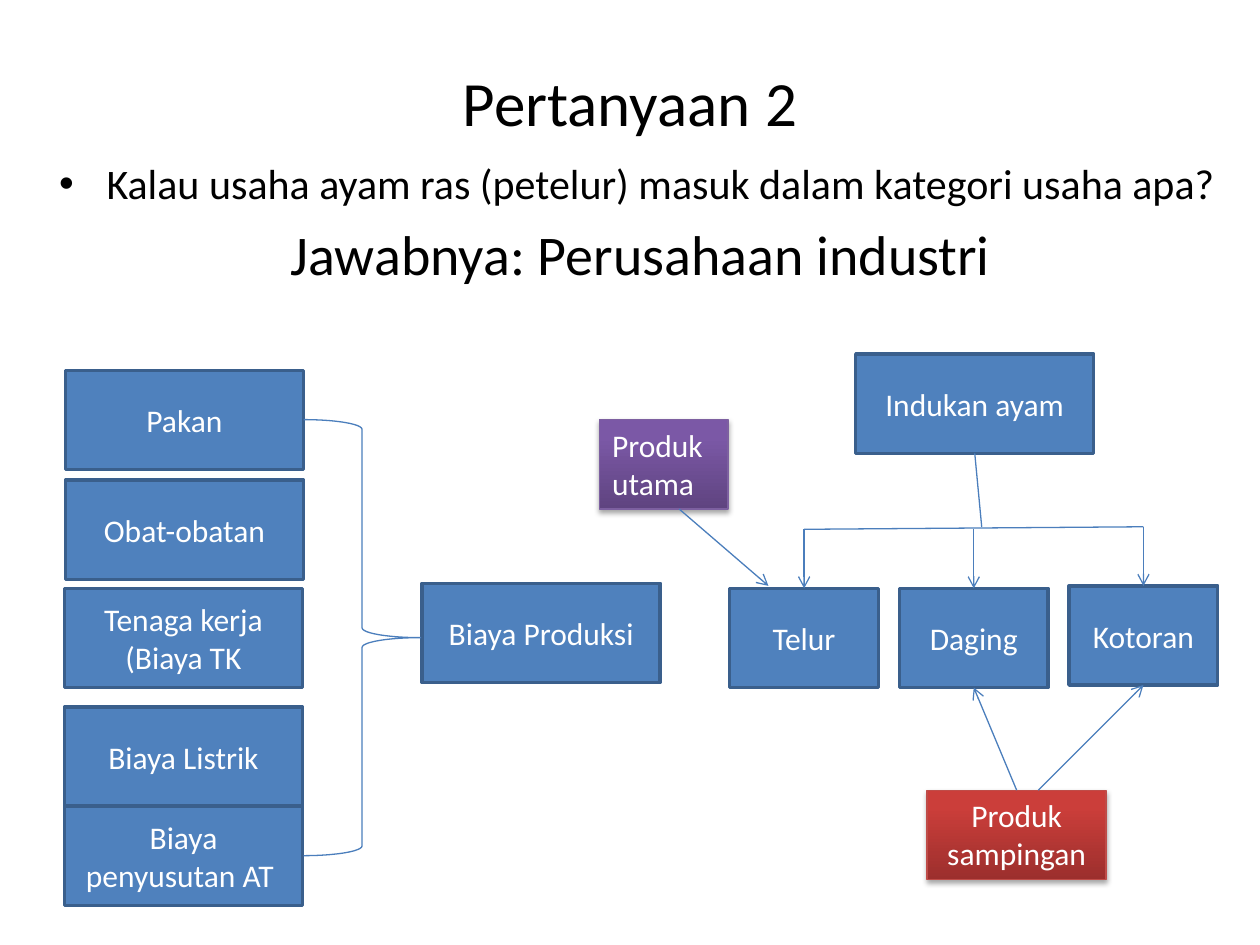
from dataclasses import dataclass
from typing import Optional

from lxml.etree import SubElement
from pptx import Presentation
from pptx.dml.color import RGBColor
from pptx.enum.shapes import MSO_CONNECTOR, MSO_SHAPE
from pptx.enum.text import MSO_ANCHOR, MSO_AUTO_SIZE, PP_ALIGN
from pptx.oxml.ns import qn
from pptx.util import Cm, Pt

COLORS = {
    "text": "000000", "box_text": "FFFFFF", "shadow": "000000",
    "box": "4F81BD", "box_line": "3A5F8C", "connector": "4B7EBC",
    "main_dark": "5F4480", "main_light": "7B58A6", "main_line": "7D60A0",
    "side_dark": "9C2F2D", "side_light": "CB3E3A", "side_line": "BF4C48",
}
FONT = "Calibri"
TOP, BOTTOM = 0, 2
WIDE, NARROW = 4.8, 3.0
BOX_HEIGHT, LABEL_HEIGHT = 2.0, 1.8
BRANCH_LEFT, BRANCH_STEP = 14.71, 3.42
BAR_LEFT, BAR_RIGHT = (16.21, 10.67), (23.05, 10.62)


@dataclass
class Box:
    text: str
    left: float
    top: float
    width: float = WIDE


@dataclass
class Label:
    text: str
    left: float
    top: float
    width: float
    tone: str
    align: PP_ALIGN


@dataclass
class Link:
    start: tuple
    end: tuple
    source: Optional[str] = None
    target: Optional[str] = None
    target_side: int = TOP
    source_side: int = BOTTOM
    arrow: bool = True


BOXES = [
    Box("Indukan ayam", 17.25, 7.14),
    Box("Pakan", 1.32, 7.47),
    Box("Obat-obatan", 1.32, 9.68),
    Box("Tenaga kerja (Biaya TK", 1.3, 11.86),
    Box("Biaya Listrik", 1.3, 14.25),
    Box("Biaya penyusutan AT ", 1.3, 16.26),
    Box("Biaya Produksi", 8.51, 11.76),
] + [
    Box(product, BRANCH_LEFT + i * BRANCH_STEP, top, NARROW)
    for i, (product, top) in enumerate(
        [("Telur", 11.86), ("Daging", 11.86), ("Kotoran", 11.81)])
]
LABELS = [
    Label("Produk utama", 12.09, 8.46, 2.59, "main", PP_ALIGN.LEFT),
    Label("Produk sampingan", 18.69, 15.93, 3.61, "side", PP_ALIGN.CENTER),
]
LINKS = [
    Link(BAR_LEFT, (16.21, 11.86), target="Telur"),
    Link((19.63, 10.67), (19.63, 11.86), target="Daging"),
    Link(BAR_RIGHT, (23.05, 11.81), target="Kotoran"),
    Link(BAR_LEFT, BAR_RIGHT, arrow=False),
    Link((19.65, 9.14), (19.79, 10.62), source="Indukan ayam", arrow=False),
    Link((13.69, 10.26), (15.49, 11.81)),
    Link((20.5, 15.93), (19.63, 13.86), source="Produk sampingan",
         source_side=TOP, target="Daging", target_side=BOTTOM),
    Link((20.93, 15.93), (23.06, 13.81), target="Kotoran", target_side=BOTTOM),
]


def color(key: str) -> RGBColor:
    return RGBColor.from_string(COLORS[key])


def format_paragraph(paragraph, size: int, key: str, align=None) -> None:
    paragraph.font.name = FONT
    paragraph.font.size = Pt(size)
    paragraph.font.color.rgb = color(key)
    if align is not None:
        paragraph.alignment = align


def place(shape, left: float, top: float, width: float, height: float) -> None:
    shape.left, shape.top = Cm(left), Cm(top)
    shape.width, shape.height = Cm(width), Cm(height)


def add_rectangle(slide, item, height: float, align, anchor):
    rectangle = slide.shapes.add_shape(
        MSO_SHAPE.RECTANGLE, Cm(item.left), Cm(item.top), Cm(item.width), Cm(height))
    rectangle.shadow.inherit = False
    frame = rectangle.text_frame
    frame.word_wrap = True
    frame.vertical_anchor = anchor
    frame.text = item.text
    format_paragraph(frame.paragraphs[0], 18, "box_text", align)
    return rectangle


def add_box(slide, box: Box):
    rectangle = add_rectangle(slide, box, BOX_HEIGHT, PP_ALIGN.CENTER, MSO_ANCHOR.MIDDLE)
    rectangle.fill.solid()
    rectangle.fill.fore_color.rgb = color("box")
    rectangle.line.color.rgb = color("box_line")
    rectangle.line.width = Pt(2)
    return rectangle


def add_label(slide, label: Label):
    rectangle = add_rectangle(slide, label, LABEL_HEIGHT, label.align, MSO_ANCHOR.TOP)
    rectangle.text_frame.auto_size = MSO_AUTO_SIZE.SHAPE_TO_FIT_TEXT
    rectangle.fill.gradient()
    rectangle.fill.gradient_angle = 90
    dark, light = rectangle.fill.gradient_stops
    dark.color.rgb, dark.position = color(f"{label.tone}_dark"), 0
    light.color.rgb, light.position = color(f"{label.tone}_light"), 0.8
    rectangle.line.color.rgb = color(f"{label.tone}_line")
    rectangle.line.width = Pt(0.75)
    effects = rectangle._element.spPr.find(qn("a:effectLst"))
    shadow = SubElement(effects, qn("a:outerShdw"), blurRad=str(Pt(3.1)),
                        dist=str(Pt(1.8)), dir="5400000", rotWithShape="0")
    tint = SubElement(shadow, qn("a:srgbClr"), val=COLORS["shadow"])
    SubElement(tint, qn("a:alpha"), val="35000")
    return rectangle


def add_brace(slide) -> None:
    brace = slide.shapes.add_shape(
        MSO_SHAPE.RIGHT_BRACE, Cm(6.12), Cm(8.46), Cm(2.36), Cm(8.79))
    brace.shadow.inherit = False
    brace.fill.background()
    brace.line.color.rgb = color("connector")
    brace.line.width = Pt(0.75)


def add_link(slide, link: Link, shapes: dict) -> None:
    connector = slide.shapes.add_connector(
        MSO_CONNECTOR.STRAIGHT, *map(Cm, link.start + link.end))
    if link.source:
        connector.begin_connect(shapes[link.source], link.source_side)
    if link.target:
        connector.end_connect(shapes[link.target], link.target_side)
    connector.line.color.rgb = color("connector")
    connector.line.width = Pt(0.75)
    if link.arrow:
        SubElement(connector.line._get_or_add_ln(), qn("a:tailEnd"), type="arrow")
    SubElement(connector._element.spPr, qn("a:effectLst"))


def add_heading(slide) -> None:
    title, body = slide.placeholders
    place(title, 1.27, 0.76, 22.86, 2.57)
    title.text_frame.text = "Pertanyaan 2"
    format_paragraph(title.text_frame.paragraphs[0], 36, "text", PP_ALIGN.CENTER)

    place(body, 0.94, 3.05, 23.95, 15.7)
    body.text_frame.auto_size = MSO_AUTO_SIZE.NONE
    body.text_frame.text = (
        "Kalau usaha ayam ras (petelur) masuk dalam kategori usaha apa?\n"
        "Jawabnya: Perusahaan industri")
    question, answer = body.text_frame.paragraphs
    format_paragraph(question, 24, "text")
    format_paragraph(answer, 32, "text", PP_ALIGN.CENTER)
    properties = answer._p.get_or_add_pPr()
    properties.set("marL", "0")
    properties.set("indent", "0")
    properties.insert_element_before(
        properties.makeelement(qn("a:buNone"), {}), "a:tabLst", "a:defRPr", "a:extLst")


def main() -> None:
    presentation = Presentation()
    presentation.slide_width, presentation.slide_height = Cm(25.4), Cm(19.05)
    slide = presentation.slides.add_slide(presentation.slide_layouts[1])
    add_heading(slide)
    shapes = {box.text: add_box(slide, box) for box in BOXES}
    add_brace(slide)
    shapes.update({label.text: add_label(slide, label) for label in LABELS})
    for link in LINKS:
        add_link(slide, link, shapes)
    presentation.save("out.pptx")


if __name__ == "__main__":
    main()
